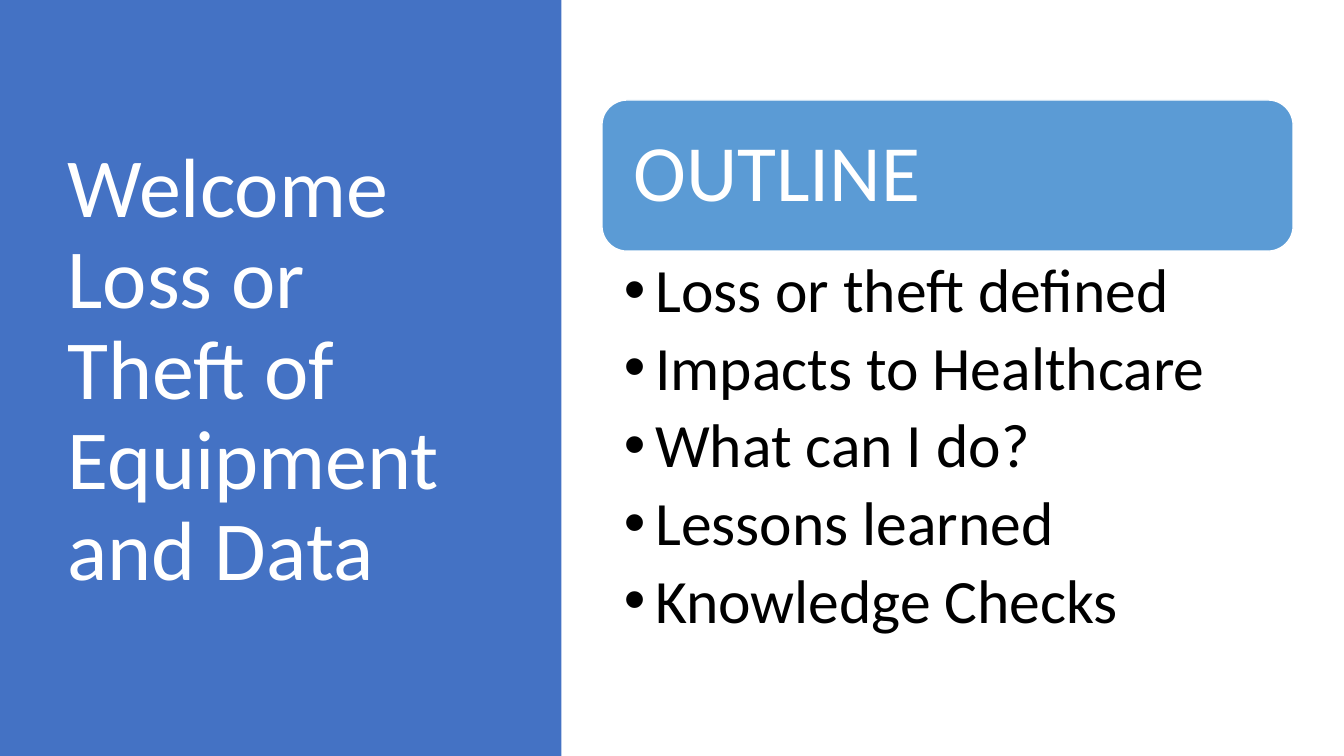
import pptx
import pptx.util
import pptx.dml.color
import pptx.enum.shapes
import pptx.enum.text
import pptx.oxml.ns
import lxml.etree

Cm = pptx.util.Cm
Pt = pptx.util.Pt
RGBColor = pptx.dml.color.RGBColor
MSO_SHAPE = pptx.enum.shapes.MSO_SHAPE
MSO_ANCHOR = pptx.enum.text.MSO_ANCHOR

PANEL_BLUE = RGBColor(0x44, 0x72, 0xC4)
HEADING_BLUE = RGBColor(0x5B, 0x9B, 0xD5)
WHITE = RGBColor(0xFF, 0xFF, 0xFF)
BLACK = RGBColor(0x00, 0x00, 0x00)

SLIDE_W, SLIDE_H = Cm(33.87), Cm(19.05)
PANEL_W = Cm(14.15)
TOPICS = [
    "Loss or theft defined",
    "Impacts to Healthcare",
    "What can I do?",
    "Lessons learned",
    "Knowledge Checks",
]


def place(sp, left, top, width, height):
    sp.left, sp.top, sp.width, sp.height = left, top, width, height


def add_block(s, shape_type, box, fill, line=None):
    sp = s.shapes.add_shape(shape_type, *box)
    sp.shadow.inherit = False
    sp.fill.solid()
    sp.fill.fore_color.rgb = fill
    if line is None:
        sp.line.fill.background()
    else:
        sp.line.color.rgb = line
        sp.line.width = Pt(1)
    return sp


def set_frame(tf, anchor, left, top, right, bottom):
    tf.word_wrap = True
    tf.auto_size = pptx.enum.text.MSO_AUTO_SIZE.NONE
    tf.vertical_anchor = anchor
    tf.margin_left, tf.margin_top = left, top
    tf.margin_right, tf.margin_bottom = right, bottom


def format_paragraph(p, size, color, after=0):
    p.alignment = pptx.enum.text.PP_ALIGN.LEFT
    p.line_spacing = 0.9
    p.space_before = Pt(0)
    p.space_after = Pt(after)
    for r in p.runs:
        r.font.name = "Calibri"
        r.font.size = Pt(size)
        r.font.color.rgb = color


def add_bullet(p, indent):
    pPr = p._p.get_or_add_pPr()
    pPr.set("marL", str(indent))
    pPr.set("indent", str(-indent))
    qn = pptx.oxml.ns.qn
    lxml.etree.SubElement(pPr, qn("a:buFont")).set("typeface", "Arial")
    lxml.etree.SubElement(pPr, qn("a:buChar")).set("char", "•")


def build_title_panel(s, left, top, width, height):
    panel = add_block(s, MSO_SHAPE.RECTANGLE, (left, top, width, height), PANEL_BLUE)
    s.shapes._spTree.insert(2, panel._element)
    title = s.shapes.title
    place(title, left + Cm(1.45), top + Cm(1.73), Cm(10.57), Cm(15.29))
    tf = title.text_frame
    set_frame(tf, MSO_ANCHOR.MIDDLE, Cm(0.25), Cm(0.13), Cm(0.25), Cm(0.13))
    tf.text = "Welcome\vLoss or Theft of Equipment and Data"
    format_paragraph(tf.paragraphs[0], 60, WHITE)


def build_outline(s, left, top, width, height):
    heading_h = Cm(3.81)
    heading = add_block(s, MSO_SHAPE.ROUNDED_RECTANGLE,
                        (left, top, width, heading_h), HEADING_BLUE, WHITE)
    tf = heading.text_frame
    set_frame(tf, MSO_ANCHOR.MIDDLE, *[Cm(0.61)] * 4)
    tf.text = "OUTLINE"
    format_paragraph(tf.paragraphs[0], 57, WHITE)

    body = s.placeholders[1]
    place(body, left, top + heading_h, width, height - heading_h)
    tf = body.text_frame
    set_frame(tf, MSO_ANCHOR.TOP, Cm(0.55), Cm(0.2), Cm(1.11), Cm(0.2))
    tf.text = "\n".join(TOPICS)
    for p in tf.paragraphs:
        add_bullet(p, Cm(0.79))
        format_paragraph(p, 44, BLACK, after=8)


def main():
    prs = pptx.Presentation()
    prs.slide_width, prs.slide_height = SLIDE_W, SLIDE_H
    s = prs.slides.add_slide(prs.slide_layouts[1])
    build_title_panel(s, 0, 0, PANEL_W, SLIDE_H)
    build_outline(s, PANEL_W + Cm(1.02), Cm(2.52), Cm(17.42), Cm(14.3))
    prs.save("out.pptx")


if __name__ == "__main__":
    main()
